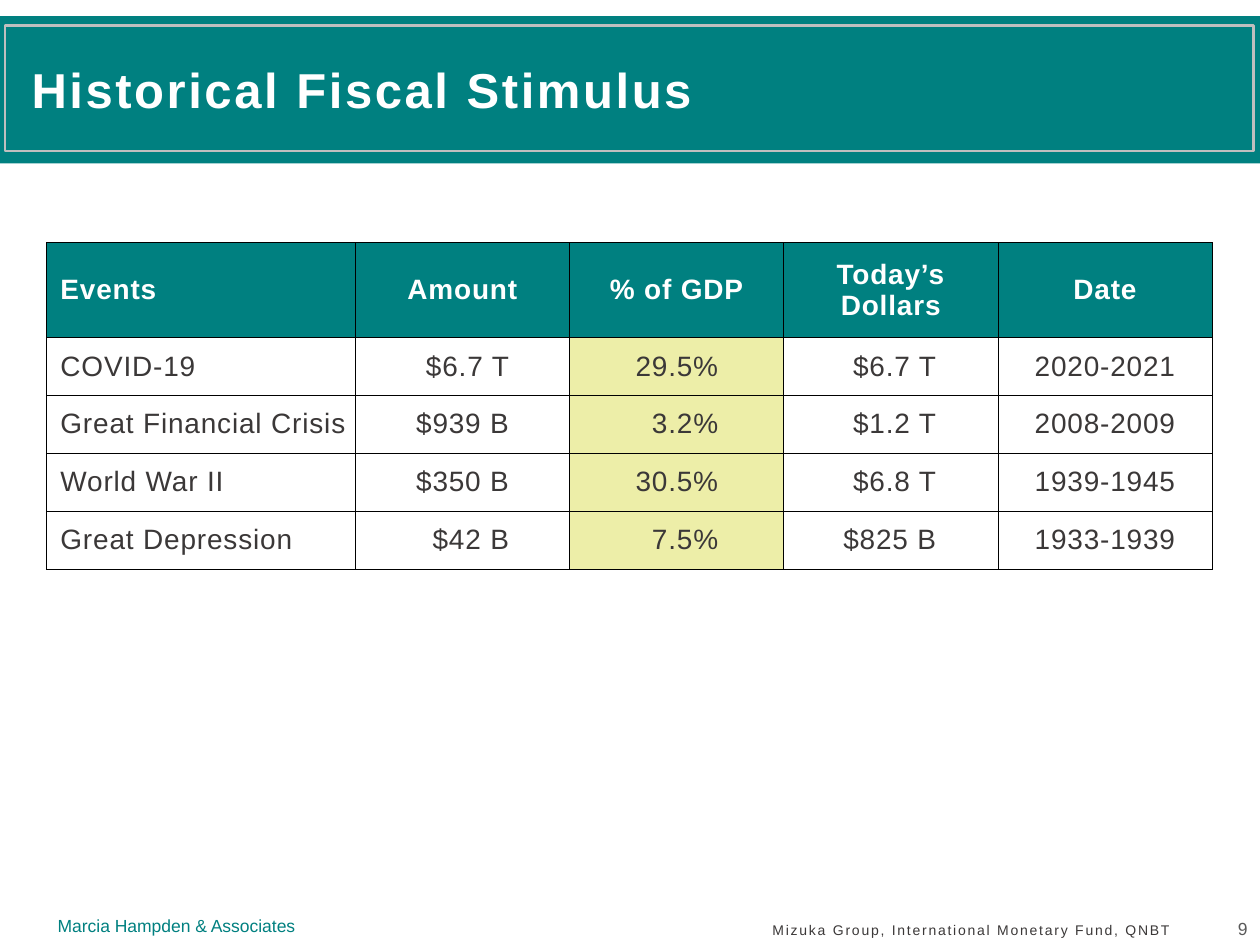
"""Build the fiscal stimulus slide: title banner, table of events and footer."""
from dataclasses import dataclass
from typing import Any, Optional

from lxml import etree
from pptx import Presentation
from pptx import util as u
from pptx.dml.color import RGBColor
from pptx.enum import shapes, text
from pptx.oxml import ns

WIDE, HIGH = u.Inches(10), u.Inches(7.5)
TEAL = RGBColor(0x00, 0x80, 0x80)
WHITE = RGBColor(0xFF, 0xFF, 0xFF)
INK = RGBColor(0x3B, 0x38, 0x38)
GREY = RGBColor(0x59, 0x59, 0x59)
RIM = RGBColor(0xBF, 0xBF, 0xBF)
CREAM = RGBColor(0xED, 0xEE, 0xA8)
LEFT, MID, RIGHT = text.PP_ALIGN.LEFT, text.PP_ALIGN.CENTER, text.PP_ALIGN.RIGHT
CENTER, BOTTOM = text.MSO_ANCHOR.MIDDLE, text.MSO_ANCHOR.BOTTOM


@dataclass(frozen=True)
class Box:
    """A frame given as shares of the slide's width and height."""
    x: float
    y: float
    w: float
    h: float

    def frame(self) -> tuple[int, int, int, int]:
        """Return left, top, width and height as lengths."""
        return (int(self.x * WIDE), int(self.y * HIGH),
                int(self.w * WIDE), int(self.h * HIGH))


@dataclass(frozen=True)
class Style:
    """The look of one paragraph."""
    size: float
    color: RGBColor
    align: Any = LEFT
    bold: bool = False
    track: int = 0


@dataclass(frozen=True)
class Column:
    """A table column: heading, width, values, alignment, margins and fill."""
    head: str
    width: float
    items: tuple[str, ...]
    align: Any = RIGHT
    left: float = 0.1
    right: float = 0.5
    fill: Optional[RGBColor] = None


COLUMNS = (
    Column("Events", 2.45, ("COVID-19", "Great Financial Crisis", "World War II",
                            "Great Depression"), LEFT, 0.11, 0.01),
    Column("Amount", 1.7, ("$6.7 T", "$939 B", "$350 B", "$42 B"), right=0.48),
    Column("% of GDP", 1.7, ("29.5%", "3.2%", "30.5%", "7.5%"), right=0.52, fill=CREAM),
    Column("Today’s Dollars", 1.7, ("$6.7 T", "$1.2 T", "$6.8 T", "$825 B"), right=0.49),
    Column("Date", 1.7, ("2020-2021", "2008-2009", "1939-1945", "1933-1939"), MID, right=0.1),
)
ROWS = (0.75, 0.46, 0.46, 0.46, 0.46)


def write(frame: Any, words: str, style: Style, anchor: Any = CENTER) -> Any:
    """Put one styled paragraph in a text frame and return it."""
    frame.text = words
    frame.word_wrap = True
    frame.vertical_anchor = anchor
    para = frame.paragraphs[0]
    para.alignment = style.align
    font = para.font
    font.name, font.size, font.bold = "Arial", u.Pt(style.size), style.bold
    font.color.rgb = style.color
    para._p.pPr.defRPr.set("spc", str(style.track))
    return para


def place(shape: Any, box: Box) -> None:
    """Move a shape to a box."""
    shape.left, shape.top, shape.width, shape.height = box.frame()


def panel(slide: Any, box: Box, depth: int, fill: Optional[RGBColor] = None,
          line: Optional[RGBColor] = None) -> None:
    """Draw a plain rectangle at a given depth behind the text."""
    shape = slide.shapes.add_shape(shapes.MSO_SHAPE.RECTANGLE, *box.frame())
    shape.shadow.inherit = False
    if fill is None:
        shape.fill.background()
    else:
        shape.fill.solid()
        shape.fill.fore_color.rgb = fill
    if line is None:
        shape.line.fill.background()
    else:
        shape.line.color.rgb = line
        shape.line.width = u.Pt(1.5)
    slide.shapes._spTree.insert(2 + depth, shape._element)


def label(slide: Any, box: Box, words: str, style: Style, anchor: Any) -> None:
    """Add a text box with one line of text."""
    write(slide.shapes.add_textbox(*box.frame()).text_frame, words, style, anchor)


def border(cell: Any) -> None:
    """Give a cell thin black edges."""
    props = cell._tc.get_or_add_tcPr()
    for side in ("a:lnL", "a:lnR", "a:lnT", "a:lnB"):
        edge = etree.SubElement(props, ns.qn(side), w=str(u.Pt(0.5)))
        solid = etree.SubElement(edge, ns.qn("a:solidFill"))
        etree.SubElement(solid, ns.qn("a:srgbClr"), val="000000")


def fill_cell(cell: Any, words: str, style: Style, color: Optional[RGBColor],
              left: float, right: float) -> None:
    """Write, edge and fill one table cell."""
    cell.margin_left, cell.margin_right = u.Inches(left), u.Inches(right)
    cell.margin_top = cell.margin_bottom = u.Inches(0.01)
    cell.vertical_anchor = CENTER
    border(cell)
    if color is None:
        cell.fill.background()
    else:
        cell.fill.solid()
        cell.fill.fore_color.rgb = color
    para = write(cell.text_frame, words, style)
    para.line_spacing = 1.0


def events(slide: Any, box: Box) -> None:
    """Add the table of stimulus events."""
    grid = slide.shapes.add_table(len(ROWS), len(COLUMNS), *box.frame()).table
    grid.first_row = grid.horz_banding = False
    for row, high in zip(grid.rows, ROWS):
        row.height = u.Inches(high)
    for c, col in enumerate(COLUMNS):
        grid.columns[c].width = u.Inches(col.width)
        first = col.align == LEFT
        head = Style(16, WHITE, LEFT if first else MID, True, 50)
        fill_cell(grid.cell(0, c), col.head, head, TEAL, 0.11 if first else 0.01, 0.01)
        for r, item in enumerate(col.items, 1):
            fill_cell(grid.cell(r, c), item, Style(16, INK, col.align, track=50),
                      col.fill, col.left, col.right)


def main() -> None:
    """Build and save the slide."""
    deck = Presentation()
    deck.slide_width, deck.slide_height = WIDE, HIGH
    slide = deck.slides.add_slide(deck.slide_layouts[1])
    panel(slide, Box(0, 0.017, 1, 0.156), 0, fill=TEAL)
    panel(slide, Box(0.004, 0.027, 0.991, 0.133), 1, line=RIM)

    title, source = slide.placeholders
    place(title, Box(0.015, 0.04, 0.982, 0.115))
    para = write(title.text_frame, "Historical Fiscal Stimulus",
                 Style(28, WHITE, bold=True, track=150))
    para.line_spacing = 0.9

    place(source, Box(0.5, 0.94, 0.439, 0.06))
    para = write(source.text_frame, "Mizuka Group, International Monetary Fund, QNBT",
                 Style(8, INK, RIGHT, track=100), BOTTOM)
    props = para._p.pPr
    props.set("marL", "0")
    props.set("indent", "0")
    props.insert_element_before(etree.Element(ns.qn("a:buNone")), "a:tabLst", "a:defRPr")

    events(slide, Box(0.037, 0.257, 0.925, 0.345))
    label(slide, Box(0, 0.959, 0.28, 0.041), "Marcia Hampden & Associates",
          Style(10, TEAL, MID), CENTER)
    label(slide, Box(0.949, 0.947, 0.051, 0.053), "9", Style(10, GREY, RIGHT), BOTTOM)
    deck.save("out.pptx")


if __name__ == "__main__":
    main()
